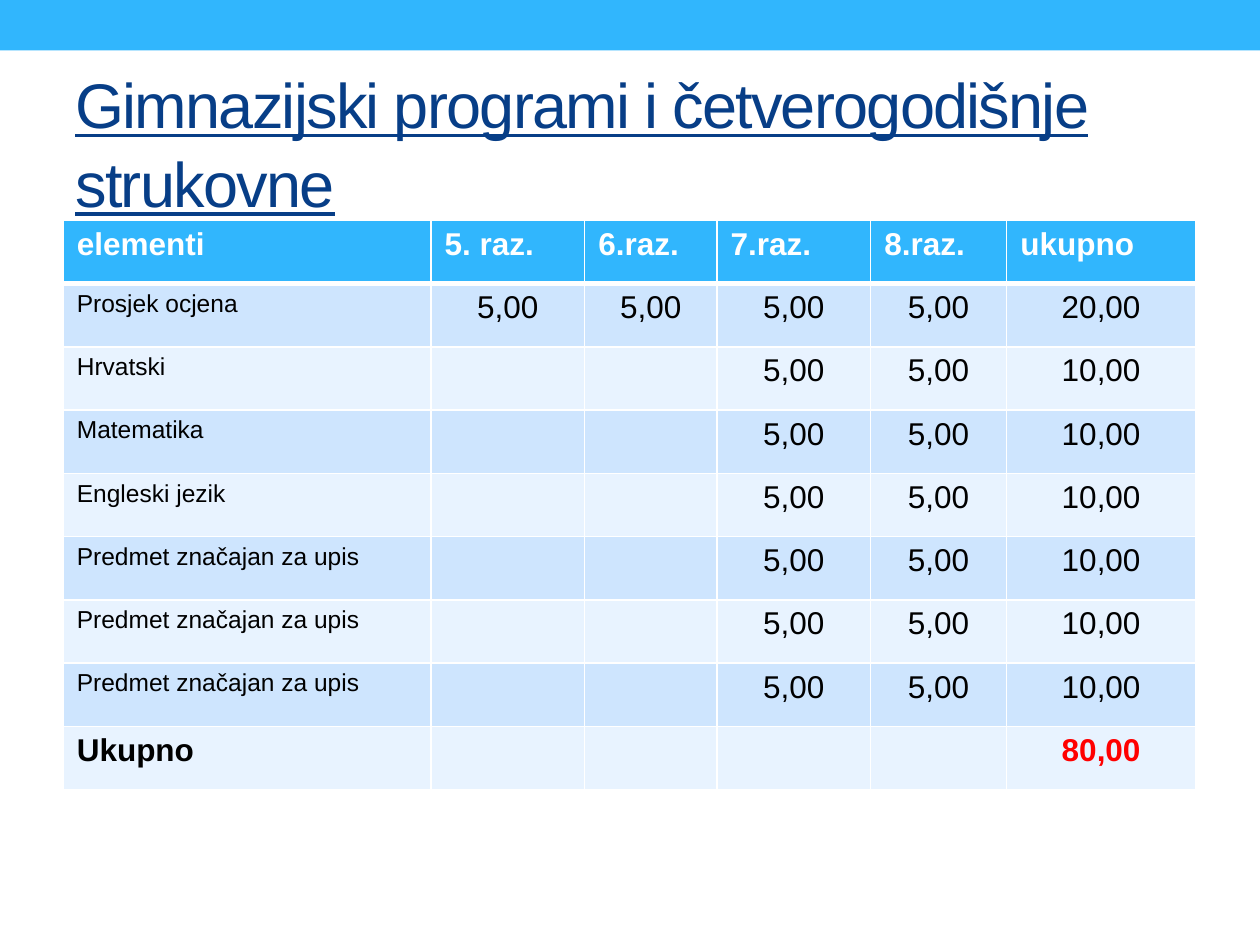
from dataclasses import dataclass

from lxml import etree
from pptx import Presentation
from pptx import util as u
from pptx.dml.color import RGBColor
from pptx.enum import shapes, text
from pptx.oxml.ns import qn

SKY = RGBColor(0x31, 0xB6, 0xFD)
NAVY = RGBColor(0x07, 0x3E, 0x87)
BAND_DARK = RGBColor(0xCE, 0xE5, 0xFE)
BAND_LIGHT = RGBColor(0xE8, 0xF3, 0xFF)
WHITE = RGBColor(0xFF, 0xFF, 0xFF)
BLACK = RGBColor(0, 0, 0)
RED = RGBColor(0xFF, 0, 0)

FONT = "Arial"
COLUMN_WIDTHS = (2.92, 1.22, 1.05, 1.22, 1.08, 1.5)
TABLE_HEIGHT = 4.52


@dataclass
class CellStyle:
    fill: RGBColor
    color: RGBColor = BLACK
    size: int = 18
    bold: bool = False
    centred: bool = True
    bottom_line: int = 1


HEADER = ("elementi", "5. raz.", "6.raz.", "7.raz.", "8.raz.", "ukupno")
SUBJECTS = ("Hrvatski", "Matematika", "Engleski jezik") + ("Predmet značajan za upis",) * 3
ROWS = [
    HEADER,
    ("Prosjek ocjena", *["5,00"] * 4, "20,00"),
    *[(subject, "", "", "5,00", "5,00", "10,00") for subject in SUBJECTS],
    ("Ukupno", "", "", "", "", "80,00"),
]


def set_format(target, values: dict) -> None:
    for name, value in values.items():
        setattr(target, name, value)


def cell_style(row: int, column: int) -> CellStyle:
    if row == 0:
        return CellStyle(SKY, WHITE, bold=True, centred=False, bottom_line=3)
    style = CellStyle(BAND_DARK if row % 2 else BAND_LIGHT, centred=column > 0)
    if row == len(ROWS) - 1:
        style.bold = True
        style.color = RED if column else BLACK
    elif column == 0:
        style.size = 14
    return style


def add_borders(cell, widths: dict[str, int]) -> None:
    properties = cell._tc.get_or_add_tcPr()
    for index, (side, width) in enumerate(widths.items()):
        line = etree.Element(qn(f"a:{side}"), w=str(u.Pt(width)))
        fill = etree.SubElement(line, qn("a:solidFill"))
        etree.SubElement(fill, qn("a:srgbClr"), val=str(WHITE))
        properties.insert(index, line)


def fill_cell(cell, words: str, style: CellStyle, top_line: int) -> None:
    cell.fill.solid()
    cell.fill.fore_color.rgb = style.fill
    set_format(cell, {
        "margin_left": u.Inches(0.11), "margin_right": u.Inches(0.11),
        "margin_top": u.Inches(0.05), "margin_bottom": u.Inches(0.05),
    })
    add_borders(cell, {"lnL": 1, "lnR": 1, "lnT": top_line, "lnB": style.bottom_line})
    if not words:
        return
    para = cell.text_frame.paragraphs[0]
    para.alignment = text.PP_ALIGN.CENTER if style.centred else text.PP_ALIGN.LEFT
    span = para.add_run()
    span.text = words
    set_format(span.font, {"name": FONT, "size": u.Pt(style.size), "bold": style.bold})
    span.font.color.rgb = style.color


def add_banner(page) -> None:
    banner = page.shapes.add_shape(
        shapes.MSO_SHAPE.RECTANGLE, 0, 0, u.Inches(10), u.Inches(0.4))
    banner.shadow.inherit = False
    banner.fill.solid()
    banner.fill.fore_color.rgb = SKY
    banner.line.fill.background()


def add_title(page, words: str) -> None:
    box = page.shapes.add_textbox(
        u.Inches(0.5), u.Inches(0.58), u.Inches(9), u.Inches(1.08))
    set_format(box.text_frame, {
        "word_wrap": True, "vertical_anchor": text.MSO_ANCHOR.MIDDLE})
    para = box.text_frame.paragraphs[0]
    para.line_spacing = 1.04
    span = para.add_run()
    span.text = words
    set_format(span.font, {"name": FONT, "size": u.Pt(36), "underline": True})
    span.font.color.rgb = NAVY
    # Letter spacing of -1 point
    span._r.get_or_add_rPr().set("spc", "-100")


def add_points_table(page) -> None:
    table = page.shapes.add_table(
        len(ROWS), len(COLUMN_WIDTHS), u.Inches(0.5), u.Inches(1.75),
        u.Inches(9), u.Inches(TABLE_HEIGHT)).table
    for column, width in zip(table.columns, COLUMN_WIDTHS):
        column.width = u.Inches(width)
    for row in table.rows:
        row.height = u.Inches(TABLE_HEIGHT / len(ROWS))
    for r, row in enumerate(ROWS):
        for c, words in enumerate(row):
            fill_cell(table.cell(r, c), words, cell_style(r, c), 3 if r == 1 else 1)


def main() -> None:
    deck = Presentation()
    deck.slide_width, deck.slide_height = u.Inches(10), u.Inches(7.5)
    page = deck.slides.add_slide(deck.slide_layouts[6])
    add_banner(page)
    add_title(page, "Gimnazijski programi i četverogodišnje strukovne")
    add_points_table(page)
    deck.save("out.pptx")


if __name__ == "__main__":
    main()
